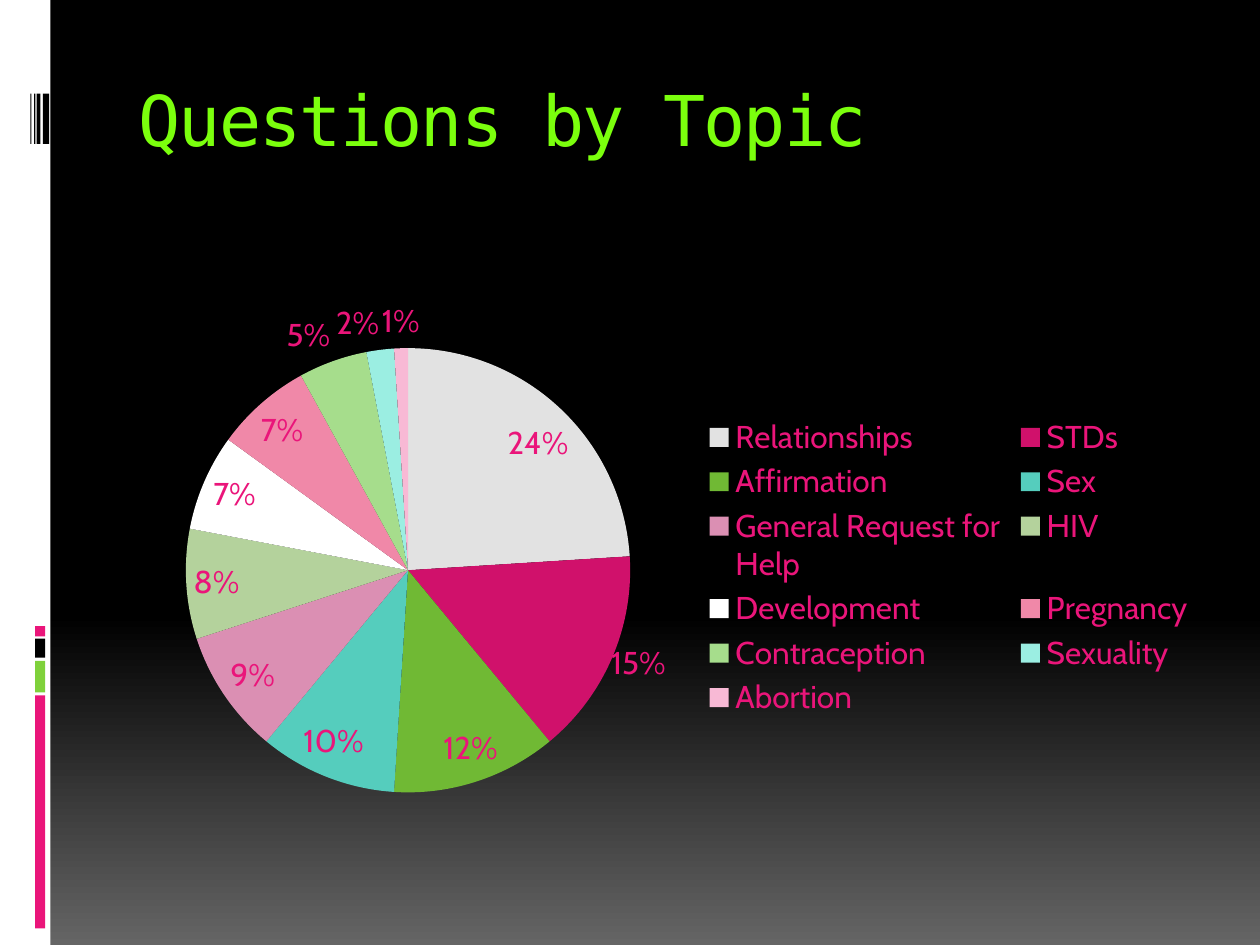
from pptx import Presentation
from pptx.chart.data import CategoryChartData
from pptx.dml.color import RGBColor
from pptx.enum.chart import XL_CHART_TYPE, XL_LABEL_POSITION, XL_LEGEND_POSITION
from pptx.enum.shapes import MSO_SHAPE
from pptx.enum.text import MSO_ANCHOR
from pptx.oxml import parse_xml
from pptx.oxml.ns import nsdecls
from pptx.util import Pt

RECT = MSO_SHAPE.RECTANGLE
BEST_FIT = XL_LABEL_POSITION.BEST_FIT
OUTSIDE = XL_LABEL_POSITION.OUTSIDE_END

THEME = {
    "white": "FFFFFF", "black": "000000", "gray": "656565",
    "pink": "EA157A", "green": "7FD13B", "title": "7BFF0D",
    "title_font": "DejaVu Sans Mono", "body_font": "Cabin",
    "title_size": 40, "body_size": 18,
}

# Content: topic, share, slice colour
TITLE = "Questions by Topic"
TOPICS = [
    ("Relationships", 0.24, "E2E2E2"),
    ("STDs", 0.15, "D0116B"),
    ("Affirmation", 0.12, "70B934"),
    ("Sex", 0.10, "55CDBD"),
    ("General Request for Help", 0.09, "DB8FB3"),
    ("HIV", 0.08, "B4D29C"),
    ("Development", 0.07, "FFFFFF"),
    ("Pregnancy", 0.07, "F088A8"),
    ("Contraception", 0.05, "A6DD8C"),
    ("Sexuality", 0.02, "9BEEE2"),
    ("Abortion", 0.01, "F8B9D5"),
]

# Side rail: (top, height, colour) blocks and (left, width) stripes
BLOCKS = [(397.4, 133.2, "pink"), (377.7, 18, "green"),
          (365, 10.8, "black"), (357.8, 5.8, "pink")]
STRIPES = [(24.5, 3.6), (21, 2.1), (19.5, 0.7), (17.4, 0.6)]

# Fractions of the chart: plot frame, and shifts of single labels
PLOT = {"x": 0.064, "y": 0.193, "w": 0.407, "h": 0.622}
LABEL_SHIFTS = {"STDs": {"x": -0.007, "y": -0.024}}


def rgb(value):
    return RGBColor.from_string(THEME.get(value, value))


def add_rect(s, x, y, w, h, color):
    sp = s.shapes.add_shape(RECT, Pt(x), Pt(y), Pt(w), Pt(h))
    sp.shadow.inherit = False
    sp.fill.solid()
    sp.fill.fore_color.rgb = rgb(color)
    sp.line.fill.background()


def style_font(font, name, size, color):
    font.name = THEME[name]
    font.size = Pt(THEME[size])
    font.color.rgb = rgb(color)


def manual_layout(values, modes=""):
    sizes = "".join(f'<c:{k} val="{v}"/>' for k, v in values.items())
    return parse_xml(f'<c:layout {nsdecls("c")}><c:manualLayout>{modes}{sizes}'
                     f'</c:manualLayout></c:layout>')


def set_background(s):
    fill = s.background.fill
    fill.gradient()
    fill.gradient_angle = 270
    for stop, (pos, color) in zip(fill.gradient_stops, [(0.65, "black"), (1, "gray")]):
        stop.position = pos
        stop.color.rgb = rgb(color)


def add_rail(s):
    add_rect(s, 0, 0, 28.8, 540, "white")
    for y, h, color in BLOCKS:
        add_rect(s, 20, y, 5.8, h, color)
    for x, w in STRIPES:
        add_rect(s, x, 53.5, w, 28.8, "black")


def add_title(s):
    tf = s.shapes.add_textbox(Pt(72), Pt(40), Pt(612), Pt(72)).text_frame
    tf.word_wrap = True
    tf.vertical_anchor = MSO_ANCHOR.TOP
    tf.text = TITLE
    r = tf.paragraphs[0].runs[0]
    style_font(r.font, "title_font", "title_size", "title")
    r._r.get_or_add_rPr().set("spc", "-100")


def add_pie(s):
    data = CategoryChartData(number_format="0%")
    data.categories = [topic[0] for topic in TOPICS]
    data.add_series("Series 1", [topic[1] for topic in TOPICS])
    chart = s.shapes.add_chart(XL_CHART_TYPE.PIE, Pt(66.2), Pt(120.2),
                               Pt(624.2), Pt(408.2), data).chart
    chart.has_title = False
    style_font(chart.font, "body_font", "body_size", "pink")

    # Legend
    chart.has_legend = True
    legend = chart.legend
    legend.position = XL_LEGEND_POSITION.RIGHT
    legend.include_in_layout = False
    style_font(legend.font, "body_font", "body_size", "pink")

    # Labels
    plot = chart.plots[0]
    plot.vary_by_categories = True
    plot.has_data_labels = True
    labels = plot.data_labels
    labels.show_value = True
    labels.show_percentage = False
    labels.number_format = "0%"
    labels.number_format_is_linked = False
    labels.position = BEST_FIT
    style_font(labels.font, "body_font", "body_size", "pink")

    # Slices
    for i, (topic, _, color) in enumerate(TOPICS):
        point = plot.series[0].points[i]
        point.format.fill.solid()
        point.format.fill.fore_color.rgb = rgb(color)
        point.format.line.fill.background()
        label = point.data_label
        style_font(label.font, "body_font", "body_size", "pink")
        label.position = BEST_FIT
        if topic in LABEL_SHIFTS:
            label.position = OUTSIDE
            idx = plot.series[0]._element.xpath(f'.//c:dLbl/c:idx[@val="{i}"]')[0]
            idx.addnext(manual_layout(LABEL_SHIFTS[topic]))

    # Fixed frame for the plot
    area = chart._chartSpace.chart.plotArea
    for old in area.xpath("c:layout"):
        area.remove(old)
    modes = ('<c:layoutTarget val="inner"/>'
             '<c:xMode val="edge"/><c:yMode val="edge"/>')
    area.insert(0, manual_layout(PLOT, modes))


def main():
    prs = Presentation()
    prs.slide_width, prs.slide_height = Pt(720), Pt(540)
    s = prs.slides.add_slide(prs.slide_layouts[6])
    set_background(s)
    add_rail(s)
    add_title(s)
    add_pie(s)
    prs.save("out.pptx")


if __name__ == "__main__":
    main()
